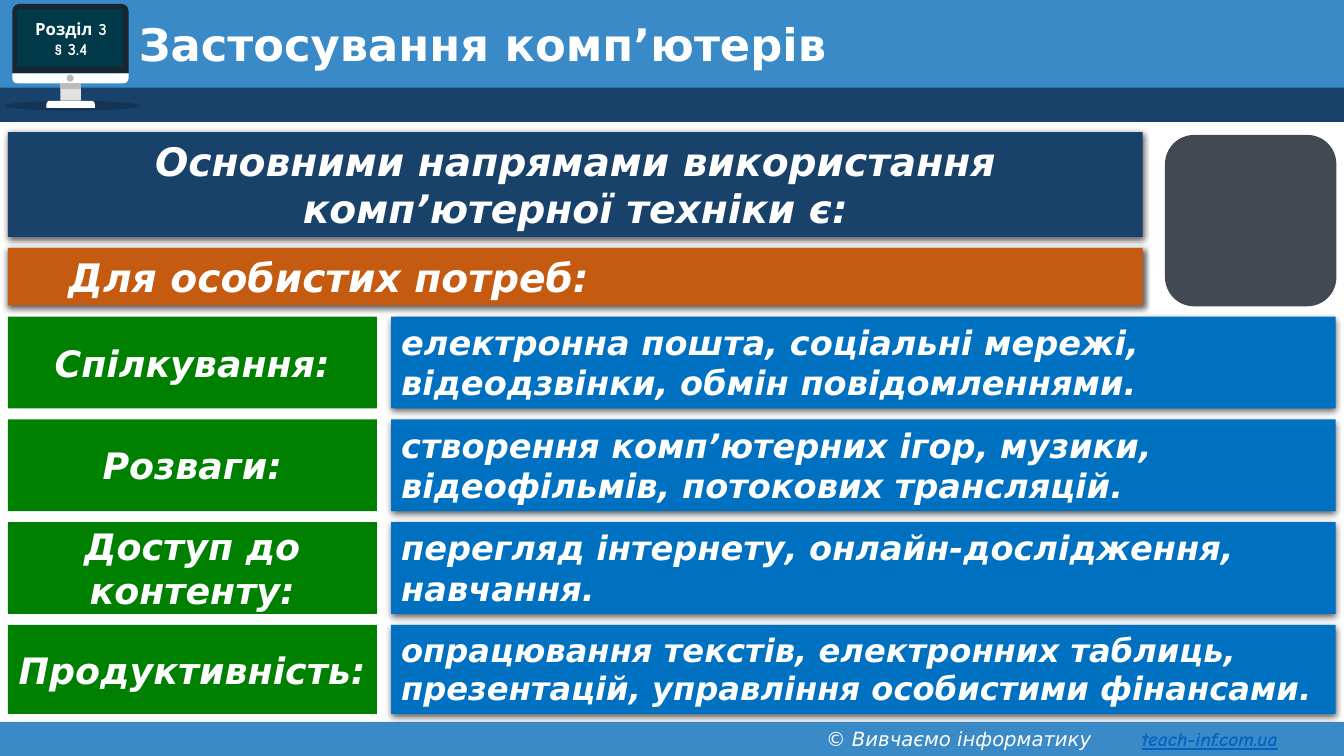
"""Build the slide on personal uses of computers."""
from lxml import etree
from pptx import Presentation
from pptx.dml.color import RGBColor
from pptx.enum import shapes, text
from pptx.oxml.ns import qn
from pptx.util import Cm, Pt

COLORS = {
    "sky": "398AC7", "navy": "19426B", "orange": "C55A11", "green": "008000",
    "blue": "0070C0", "slate": "424953", "white": "FFFFFF", "black": "000000",
    "case": "182632", "screen": "003948", "metal": "E1E1E1", "gray": "BBBBBB",
    "link": "0563C1",
}
SANS, COMIC = "DejaVu Sans", "Comic Neue"
SLIDE_W, SLIDE_H = 33.87, 19.05
TITLE = "Застосування комп’ютерів"
CHAPTER = ["Розділ 3", "§ 3.4"]
HEADING = "Основними напрямами використання комп’ютерної техніки є:"
SUBHEADING = "Для особистих потреб:"
COPYRIGHT, SITE = "© Вивчаємо інформатику", "teach-inf.com.ua"
USES = [
    ("Спілкування:", "електронна пошта, соціальні мережі, "
     "відеодзвінки, обмін повідомленнями.", 24, 2.31),
    ("Розваги:", "створення комп’ютерних ігор, музики, "
     "відеофільмів, потокових трансляцій.", 24, 2.31),
    ("Доступ до контенту:", "перегляд інтернету, онлайн-дослідження, "
     "навчання.", 24, 2.31),
    ("Продуктивність:", "опрацювання текстів, електронних таблиць, "
     "презентацій, управління особистими фінансами.", 23, 2.24),
]
ROWS_TOP, ROW_PITCH = 7.98, 2.59
LABEL_X, LABEL_W, DETAIL_X, DETAIL_W = 0.2, 9.3, 9.86, 23.8
BANNER_W = 28.6

KIND = shapes.MSO_SHAPE
RECT, OVAL = KIND.RECTANGLE, KIND.OVAL
ROUND, TAB = KIND.ROUNDED_RECTANGLE, KIND.ROUND_2_SAME_RECTANGLE
BARS = [
    (RECT, (0, 0, SLIDE_W, 2.31), "sky", ()),
    (RECT, (0, 2.21, SLIDE_W, 0.86), "navy", ()),
    (RECT, (0, 18.19, SLIDE_W, 0.86), "sky", ()),
    (ROUND, (29.36, 3.4, 4.32, 4.32), "slate", (0.17,)),
]
MONITOR = [
    (TAB, (0.31, 0.1, 2.93, 1.75), "case", (0.1, 0)),
    (TAB, (0.31, 1.85, 2.93, 0.25), "white", (0, 0.5)),
    (RECT, (1.52, 2.1, 0.52, 0.44), "metal", ()),
    (RECT, (1.52, 2.1, 0.52, 0.14), "gray", ()),
    (TAB, (1.17, 2.54, 1.22, 0.18), "white", (0.5, 0)),
    (OVAL, (1.68, 1.88, 0.18, 0.18), "gray", ()),
    (ROUND, (0.43, 0.23, 2.67, 1.45), "screen", (0.04,)),
]
CENTER, LEFT = text.PP_ALIGN.CENTER, text.PP_ALIGN.LEFT
TOP, MIDDLE = text.MSO_ANCHOR.TOP, text.MSO_ANCHOR.MIDDLE


def rgb(name):
    return RGBColor.from_string(COLORS[name])


def add_alpha(color, percent):
    etree.SubElement(color, qn("a:alpha")).set("val", str(percent * 1000))


def add_block(s, kind, box, color, adjust=()):
    sp = s.shapes.add_shape(kind, *map(Cm, box))
    sp.shadow.inherit = False
    sp.fill.solid()
    sp.fill.fore_color.rgb = rgb(color)
    sp.line.fill.background()
    for i, value in enumerate(adjust):
        sp.adjustments[i] = value
    return sp


def add_shadow(sp):
    effects = sp._element.spPr.find(qn("a:effectLst"))
    shadow = etree.SubElement(effects, qn("a:outerShdw"))
    for key, value in (("blurRad", Pt(4.5)), ("dist", Pt(1.5)),
                       ("dir", 5400000), ("rotWithShape", 0)):
        shadow.set(key, str(int(value)))
    color = etree.SubElement(shadow, qn("a:srgbClr"))
    color.set("val", COLORS["black"])
    add_alpha(color, 63)


def add_text_box(s, box):
    return s.shapes.add_textbox(*map(Cm, box))


def add_run(p, words, size, font=SANS, color="white", bold=True, italic=False):
    r = p.add_run()
    r.text = words
    r.font.size, r.font.name = Pt(size), font
    r.font.bold, r.font.italic = bold, italic
    r.font.color.rgb = rgb(color)
    return r


def write(sp, lines, size, align=LEFT, anchor=TOP, **style):
    tf = sp.text_frame
    tf.word_wrap, tf.vertical_anchor = True, anchor
    for i, line in enumerate(lines):
        p = tf.add_paragraph() if i else tf.paragraphs[0]
        p.alignment = align
        add_run(p, line, size, **style)
    return tf.paragraphs[0]


def add_header(s):
    for part in BARS:
        add_block(s, *part)
    floor = add_block(s, OVAL, (0.13, 2.54, 3.4, 0.25), "black")
    add_alpha(floor.fill._xPr.find(qn("a:solidFill"))[0], 20)
    for part in MONITOR:
        add_block(s, *part)
    write(add_text_box(s, (0.33, 0.23, 2.92, 1.5)), CHAPTER, 12,
          CENTER, MIDDLE, font=COMIC)
    p = write(add_text_box(s, (3.25, 0.46, 29.77, 1.47)), [TITLE], 32,
              anchor=MIDDLE)
    p.line_spacing = 0.9


def add_footer(s):
    sp = add_text_box(s, (20.57, 18.19, 13.28, 0.86))
    sp.text_frame.word_wrap = True
    p = sp.text_frame.paragraphs[0]
    tabs = etree.SubElement(p._p.get_or_add_pPr(), qn("a:tabLst"))
    stop = etree.SubElement(tabs, qn("a:tab"))
    stop.set("pos", str(Cm(7.95)))
    stop.set("algn", "l")
    add_run(p, COPYRIGHT + "\t", 14, bold=False, italic=True)
    add_run(p, SITE, 14, COMIC, "link", italic=True).font.underline = True


def add_banners(s):
    heading = add_block(s, RECT, (LABEL_X, 3.33, BANNER_W, 2.64), "navy")
    add_shadow(heading)
    write(heading, [HEADING], 28, CENTER, italic=True)
    sub = add_block(s, RECT, (LABEL_X, 6.25, BANNER_W, 1.45), "orange")
    add_shadow(sub)
    p = write(sub, [SUBHEADING], 28, text.PP_ALIGN.JUSTIFY, italic=True)
    p._p.get_or_add_pPr().set("indent", str(Cm(1.27)))


def add_uses(s):
    for i, (label, detail, size, height) in enumerate(USES):
        y = ROWS_TOP + i * ROW_PITCH
        sp = add_block(s, RECT, (DETAIL_X, y, DETAIL_W, height), "blue")
        add_shadow(sp)
        write(sp, [detail], size, italic=True)
        sp = add_block(s, RECT, (LABEL_X, y, LABEL_W, height), "green")
        write(sp, [label], 26, CENTER, MIDDLE, italic=True)


def main():
    prs = Presentation()
    prs.slide_width, prs.slide_height = Cm(SLIDE_W), Cm(SLIDE_H)
    s = prs.slides.add_slide(prs.slide_layouts[6])
    add_header(s)
    add_footer(s)
    add_banners(s)
    add_uses(s)
    prs.save("out.pptx")


if __name__ == "__main__":
    main()
